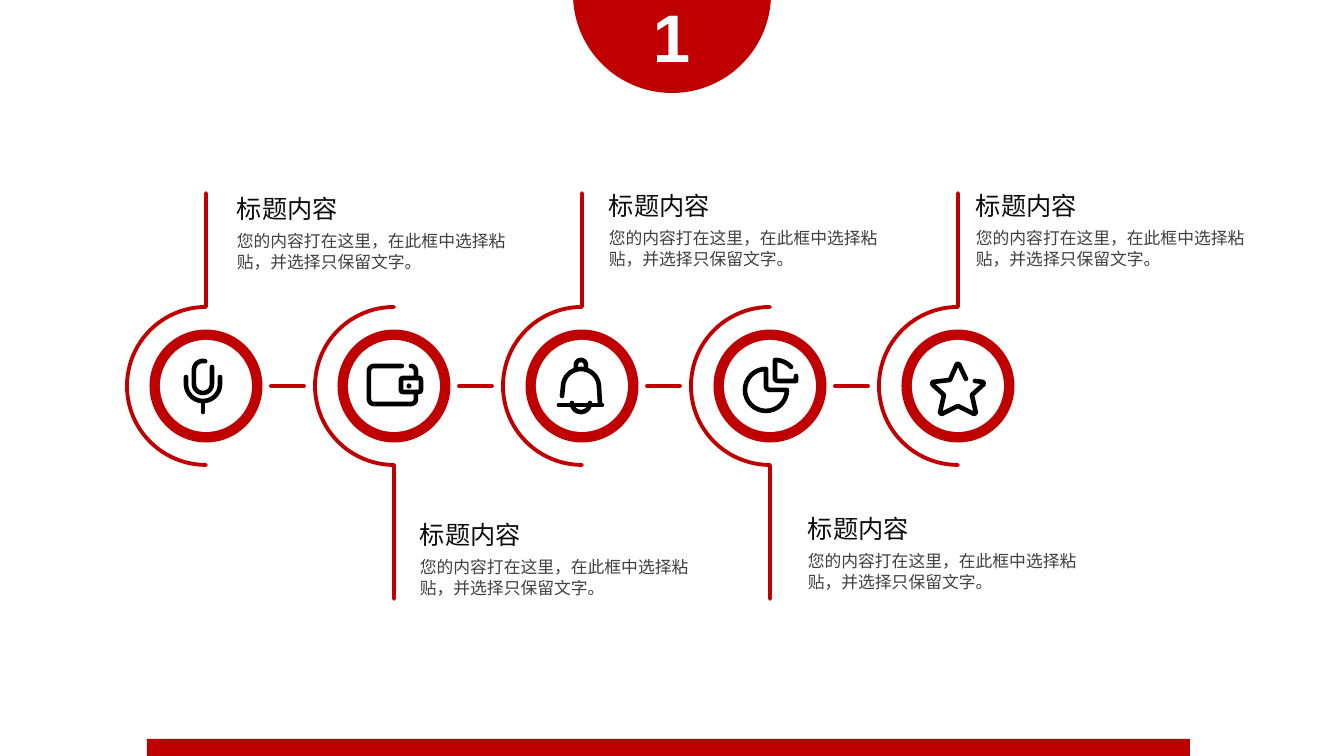
import math

import pptx
import pptx.dml.color
import pptx.enum.shapes
import pptx.enum.text
import pptx.oxml.ns
import pptx.util
from lxml import etree

RGBColor = pptx.dml.color.RGBColor
RED = RGBColor(0xC0, 0x00, 0x00)
WHITE = RGBColor(0xFF, 0xFF, 0xFF)
BLACK = RGBColor(0x00, 0x00, 0x00)
HEADING_INK = RGBColor(0x0D, 0x0D, 0x0D)
BODY_INK = RGBColor(0x40, 0x40, 0x40)

SLIDE_W, SLIDE_H = 1344, 756
PX = 12192000 / SLIDE_W
OVAL = pptx.enum.shapes.MSO_SHAPE.OVAL
RECTANGLE = pptx.enum.shapes.MSO_SHAPE.RECTANGLE
CJK_FONT = "Noto Sans CJK SC"

HEADING = dict(size=pptx.util.Pt(18), name=CJK_FONT)
BODY = dict(size=pptx.util.Pt(12), name="Calibri")
NUMBER = dict(size=pptx.util.Pt(48), name="Arial", bold=True)


def emu(px):
    return round(px * PX)


def arc(cx, cy, radius, start, end, steps=24):
    """Points of an arc; degrees run clockwise from the right."""
    angles = [math.radians(start + (end - start) * i / steps) for i in range(steps + 1)]
    return [(cx + radius * math.cos(a), cy + radius * math.sin(a)) for a in angles]


class Deck:
    def __init__(self, prs, s):
        self.prs, self.s = prs, s

    def shape(self, kind, x, y, w, h, color):
        sp = self.s.shapes.add_shape(kind, emu(x), emu(y), emu(w), emu(h))
        sp.shadow.inherit = False
        sp.fill.solid()
        sp.fill.fore_color.rgb = color
        sp.line.fill.background()

    def disc(self, cx, cy, d, color):
        self.shape(OVAL, cx - d / 2, cy - d / 2, d, d, color)

    def style_line(self, line, color, width):
        line.color.rgb = color
        line.width = pptx.util.Pt(width)
        ln = line._get_or_add_ln()
        ln.set("cap", "rnd")
        etree.SubElement(ln, pptx.oxml.ns.qn("a:round"))

    def stroke(self, points, color, width, dx=0, dy=0, close=False):
        pts = [(emu(x + dx), emu(y + dy)) for x, y in points]
        builder = self.s.shapes.build_freeform(*pts[0])
        builder.add_line_segments(pts[1:], close=close)
        sp = builder.convert_to_shape()
        sp.shadow.inherit = False
        sp.fill.background()
        self.style_line(sp.line, color, width)

    def connector(self, x1, y1, x2, y2, color, width):
        straight = pptx.enum.shapes.MSO_CONNECTOR.STRAIGHT
        c = self.s.shapes.add_connector(straight, emu(x1), emu(y1), emu(x2), emu(y2))
        self.style_line(c.line, color, width)
        etree.SubElement(c._element.spPr, pptx.oxml.ns.qn("a:effectLst"))

    def text(self, words, x, y, w, h, font, color, wrap=True, spacing=None):
        tf = self.s.shapes.add_textbox(emu(x), emu(y), emu(w), emu(h)).text_frame
        tf.word_wrap = wrap
        tf.auto_size = pptx.enum.text.MSO_AUTO_SIZE.SHAPE_TO_FIT_TEXT
        p = tf.paragraphs[0]
        if spacing:
            p.line_spacing = pptx.util.Pt(spacing)
        r = p.add_run()
        r.text = words
        for key, value in font.items():
            setattr(r.font, key, value)
        r.font.color.rgb = color
        ea = etree.SubElement(r._r.get_or_add_rPr(), pptx.oxml.ns.qn("a:ea"))
        ea.set("typeface", CJK_FONT)


# Icon strokes, measured from the centre of each ring
MICROPHONE = [
    arc(-3, -16, 9, 285, 180) + arc(-3, -2, 9, 180, 0) + [(6, -19)],
    [(-20, -9)] + arc(-3, -2, 17, 180, 0) + [(14, -9)],
    [(-3, 16), (-3, 26)],
]
WALLET = [
    [(8, -20)] + arc(-20, -15, 5, 270, 180) + arc(-20, 13, 5, 180, 90)
    + arc(17, 13, 5, 90, 0) + [(22, 6)],
    arc(17, -15, 5, 270, 360) + [(22, -8)],
    arc(9, -6, 2, 180, 270) + arc(25, -6, 2, 270, 360)
    + arc(25, 4, 2, 0, 90) + arc(9, 4, 2, 90, 180) + [(7, -6)],
]
BELL = [
    [(-20, 10)] + arc(-1, 1, 18, 180, 360) + [(18, 17)],
    [(-23, 19), (20, 19)],
    arc(-1, 17, 9, 180, 0),
    [(-6, -16)] + arc(-1, -21, 5, 180, 360) + [(4, -16)],
]
PIE = [
    arc(-4, 4, 21, 0, 270) + arc(0, 0, 4, 180, 90) + [(17, 4)],
    [(26, -10), (26, -5)] + arc(8, -8, 3, 90, 180) + arc(5, -4, 22, 270, 317),
]
STAR = [[(8, -7), (1, -22), (-1, -22), (-8, -6), (-25, -4), (-26, -2), (-14, 9),
         (-18, 27), (-16, 28), (0, 20), (16, 28), (18, 27), (14, 9), (26, -2),
         (25, -4), (17, -5)]]

# Steps: icon and top-left corner of the text
STEPS = [
    (MICROPHONE, 227, 186),
    (WALLET, 410, 512),
    (BELL, 599, 183),
    (PIE, 798, 506),
    (STAR, 966, 183),
]
FIRST_X, STEP_X, ROW_Y = 206, 188, 386
RADIUS, STEM_TOP, STEM_BOTTOM = 79, 193, 599


def main():
    prs = pptx.Presentation()
    prs.slide_width, prs.slide_height = emu(SLIDE_W), emu(SLIDE_H)
    deck = Deck(prs, prs.slides.add_slide(prs.slide_layouts[6]))

    # Section number and footer bar
    deck.disc(672, -6, 198, RED)
    deck.text("1", 643, -10, 58, 92, NUMBER, WHITE, wrap=False)
    deck.shape(RECTANGLE, 147, 739, 1043, 17, RED)

    for i, (icon, x, y) in enumerate(STEPS):
        cx = FIRST_X + i * STEP_X

        # Dash to the next ring
        if i < len(STEPS) - 1:
            deck.connector(cx + 65, ROW_Y, cx + 98, ROW_Y, RED, 2.75)

        # Half circle with a stem, by turns up and down
        start, end, stem_y = (90, 270, STEM_TOP) if i % 2 == 0 else (270, 90, STEM_BOTTOM)
        deck.stroke(arc(cx, ROW_Y, RADIUS, start, end, 48) + [(cx, stem_y)], RED, 2.75)

        # Ring and icon
        deck.disc(cx, ROW_Y, 113, RED)
        deck.disc(cx, ROW_Y, 92, WHITE)
        for points in icon:
            deck.stroke(points, BLACK, 3.3, cx, ROW_Y)
        if icon is WALLET:
            deck.disc(cx + 15, ROW_Y, 5, BLACK)

        # Heading and body
        deck.text("标题内容", x, y, 169, 40, HEADING, HEADING_INK, spacing=23)
        deck.text("您的内容打在这里，在此框中选择粘贴，并选择只保留文字。",
                  x, y + 40, 294, 50, BODY, BODY_INK, spacing=14.5)

    prs.save("out.pptx")


if __name__ == "__main__":
    main()
